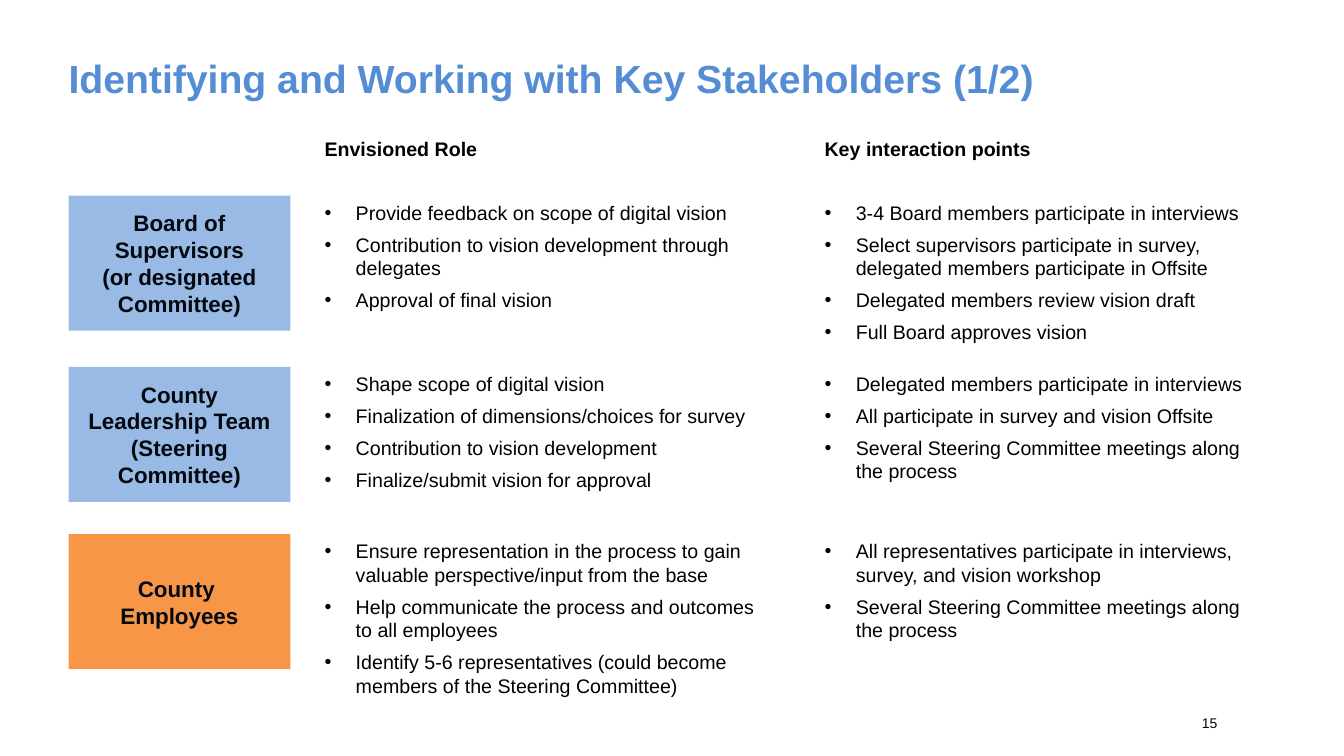
from lxml.etree import SubElement
from pptx import Presentation
from pptx.dml.color import RGBColor
from pptx.enum.shapes import MSO_SHAPE
from pptx.enum.text import MSO_ANCHOR, PP_ALIGN
from pptx.oxml.ns import qn
from pptx.util import Inches, Pt

COLORS = {
    "title": "548DD4", "body": "000000", "label": "040910", "number": "03070C",
    "leadership": "98BAE5", "employees": "F79646",
}

# Text formats: size, weight and colour of each kind of text
FORMATS = {
    "title": {"size": Pt(28), "bold": True},
    "heading": {"size": Pt(14), "bold": True},
    "body": {"size": Pt(14), "bold": False},
    "label": {"size": Pt(16), "bold": True},
    "number": {"size": Pt(10), "bold": False},
}

# Grid, in inches: (left, width) of columns and top of rows
LABEL_COLUMN = (0.68, 2.2)
TEXT_COLUMNS = [(3.12, 4.49), (8.08, 4.49)]
HEADING_TOP, HEADING_HEIGHT = 1.31, 0.34
ROW_TOPS = [1.94, 3.64, 5.3]
ROW_HEIGHT = 1.34
BULLET_INDENT = 0.31

HEADINGS = ["Envisioned Role", "Key interaction points"]

# Each stakeholder: label, fill, envisioned role, key interaction points
STAKEHOLDERS = [
    ("Board of Supervisors\n(or designated\nCommittee)", "leadership",
     ["Provide feedback on scope of digital vision",
      "Contribution to vision development through delegates",
      "Approval of final vision"],
     ["3-4 Board members participate in interviews",
      "Select supervisors participate in survey, delegated members participate in Offsite",
      "Delegated members review vision draft",
      "Full Board approves vision"]),
    ("County Leadership Team (Steering\nCommittee)", "leadership",
     ["Shape scope of digital vision",
      "Finalization of dimensions/choices for survey",
      "Contribution to vision development",
      "Finalize/submit vision for approval"],
     ["Delegated members participate in interviews",
      "All participate in survey and vision Offsite",
      "Several Steering Committee meetings along the process"]),
    ("County \nEmployees", "employees",
     ["Ensure representation in the process to gain valuable perspective/input from the base",
      "Help communicate the process and outcomes to all employees",
      "Identify 5-6 representatives (could become members of the Steering Committee)"],
     ["All representatives participate in interviews, survey, and vision workshop",
      "Several Steering Committee meetings along the process"]),
]


def apply_format(target, values):
    for name, value in values.items():
        setattr(target, name, value)


def write(frame, lines, kind, color, **paragraph_format):
    """Fill a text frame with one paragraph per line and return them."""
    frame.word_wrap = True
    for index, line in enumerate(lines):
        paragraph = frame.paragraphs[0] if index == 0 else frame.add_paragraph()
        paragraph.text = line
        apply_format(paragraph, paragraph_format)
        for run in paragraph.runs:
            apply_format(run.font, {"name": "Arial", **FORMATS[kind]})
            run.font.color.rgb = RGBColor.from_string(COLORS[color])
    return frame.paragraphs


def add_text(slide, box, lines, kind, color, frame_format=None, **paragraph_format):
    frame = slide.shapes.add_textbox(*map(Inches, box)).text_frame
    apply_format(frame, frame_format or {})
    return write(frame, lines, kind, color, **paragraph_format)


def add_bullets(slide, box, points):
    for paragraph in add_text(slide, box, points, "body", "body", space_after=Pt(6)):
        properties = paragraph._p.get_or_add_pPr()
        properties.set("marL", str(Inches(BULLET_INDENT)))
        properties.set("indent", str(-Inches(BULLET_INDENT)))
        SubElement(properties, qn("a:buFont"), typeface="Arial")
        SubElement(properties, qn("a:buChar"), char="•")


def add_label(slide, box, label, fill):
    block = slide.shapes.add_shape(MSO_SHAPE.RECTANGLE, *map(Inches, box))
    block.shadow.inherit = False
    block.fill.solid()
    block.fill.fore_color.rgb = RGBColor.from_string(COLORS[fill])
    block.line.fill.background()
    block.text_frame.vertical_anchor = MSO_ANCHOR.MIDDLE
    write(block.text_frame, [label], "label", "label", alignment=PP_ALIGN.CENTER)


def main():
    deck = Presentation()
    apply_format(deck, {"slide_width": Inches(13.33), "slide_height": Inches(7.5)})
    slide = deck.slides.add_slide(deck.slide_layouts[6])

    # Title and slide number
    no_margins = {"margin_left": 0, "margin_top": 0, "margin_right": 0,
                  "margin_bottom": 0, "vertical_anchor": MSO_ANCHOR.MIDDLE}
    add_text(slide, (0.68, 0.52, 11.33, 0.5),
             ["Identifying and Working with Key Stakeholders (1/2)"],
             "title", "title", no_margins)
    add_text(slide, (11.92, 6.97, 0.44, 0.4), ["15"], "number", "number",
             {**no_margins, "margin_right": Inches(0.1)})

    # Column headings
    for (left, width), heading in zip(TEXT_COLUMNS, HEADINGS):
        add_text(slide, (left, HEADING_TOP, width, HEADING_HEIGHT), [heading],
                 "heading", "body", space_after=Pt(6))

    # One row per stakeholder
    for top, (label, fill, *columns) in zip(ROW_TOPS, STAKEHOLDERS):
        left, width = LABEL_COLUMN
        add_label(slide, (left, top, width, ROW_HEIGHT), label, fill)
        for (left, width), points in zip(TEXT_COLUMNS, columns):
            add_bullets(slide, (left, top, width, ROW_HEIGHT), points)

    deck.save("out.pptx")


if __name__ == "__main__":
    main()
